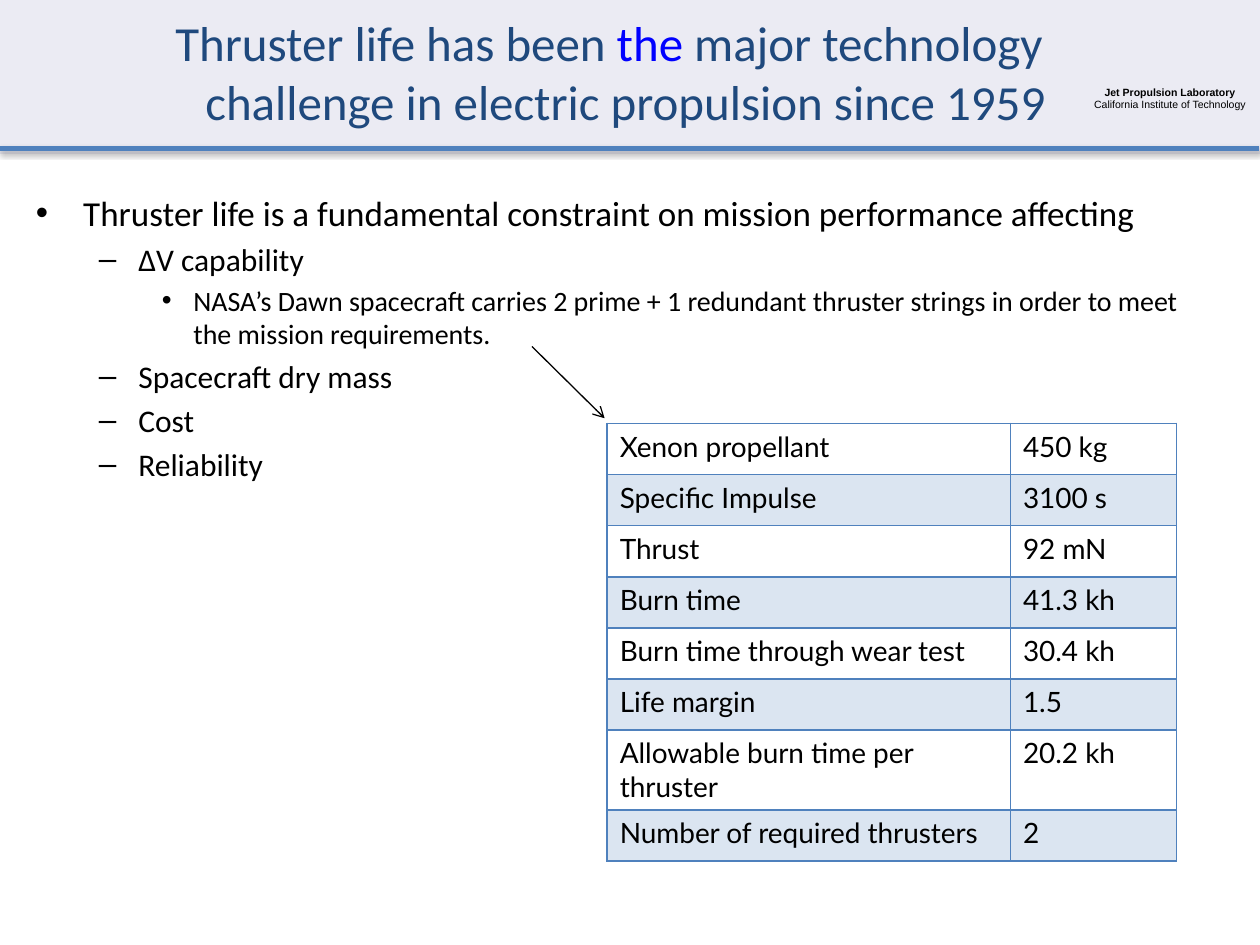
from dataclasses import dataclass

from lxml.etree import SubElement
from pptx import Presentation
from pptx.dml.color import RGBColor
from pptx.enum.shapes import MSO_CONNECTOR, MSO_SHAPE
from pptx.enum.text import MSO_ANCHOR, PP_ALIGN
from pptx.oxml.ns import qn
from pptx.util import Pt


@dataclass(frozen=True)
class Theme:
    black: str = "000000"
    navy: str = "1F497D"
    accent: str = "4F81BD"
    emphasis: str = "0000FF"
    band: str = "EBEBF3"
    body_font: str = "Calibri"
    label_font: str = "Arial"
    table_font: str = "Lato"
    title_size: float = 28
    level_sizes: tuple = (20, 18, 16)
    table_size: float = 16
    label_size: float = 6


LEVELS = ((27, -27, "•"), (58.5, -22.5, "–"), (90, -18, "•"))

BULLETS = (
    (0, "Thruster life is a fundamental constraint on mission performance affecting"),
    (1, "ΔV capability"),
    (2, "NASA’s Dawn spacecraft carries 2 prime + 1 redundant thruster strings "
        "in order to meet the mission requirements."),
    (1, "Spacecraft dry mass"),
    (1, "Cost"),
    (1, "Reliability"),
)

THRUSTER_DATA = (
    ("Xenon propellant", "450 kg"),
    ("Specific Impulse", "3100 s"),
    ("Thrust", "92 mN"),
    ("Burn time", "41.3 kh"),
    ("Burn time through wear test", "30.4 kh"),
    ("Life margin", "1.5"),
    ("Allowable burn time per thruster", "20.2 kh"),
    ("Number of required thrusters", "2"),
)


def add_span(para, text, *, font, size, color, bold=False):
    span = para.add_run()
    span.text = text
    span.font.name = font
    span.font.size = Pt(size)
    span.font.bold = bold
    span.font.color.rgb = RGBColor.from_string(color)


def add_color(parent, color, alpha):
    node = SubElement(parent, qn("a:srgbClr"), val=color)
    SubElement(node, qn("a:alpha"), val=str(alpha * 1000))


def indent(para, margin, first):
    properties = para._p.get_or_add_pPr()
    properties.set("marL", str(Pt(margin)))
    properties.set("indent", str(Pt(first)))
    return properties


class SlideBuilder:
    def __init__(self, page, theme):
        self.page = page
        self.theme = theme

    def band(self, left, top, width, height):
        band = self.page.shapes.add_shape(
            MSO_SHAPE.RECTANGLE, Pt(left), Pt(top), Pt(width), Pt(height))
        band.shadow.inherit = False
        band.fill.solid()
        band.fill.fore_color.rgb = RGBColor.from_string(self.theme.band)
        band.line.fill.background()

    def line(self, start, end, color, width, shadow=False, arrow=False):
        line = self.page.shapes.add_connector(
            MSO_CONNECTOR.STRAIGHT, *map(Pt, start + end))
        line.line.color.rgb = RGBColor.from_string(color)
        line.line.width = Pt(width)
        if arrow:
            SubElement(line.line._get_or_add_ln(), qn("a:tailEnd"), type="arrow")
        effects = SubElement(line._element.spPr, qn("a:effectLst"))
        if shadow:
            outer = SubElement(
                effects, qn("a:outerShdw"), blurRad=str(Pt(3.1)),
                dist=str(Pt(1.8)), dir="5400000", rotWithShape="0")
            add_color(outer, self.theme.black, 35)

    def text_box(self, left, top, width, height, anchor=MSO_ANCHOR.TOP):
        box = self.page.shapes.add_textbox(Pt(left), Pt(top), Pt(width), Pt(height))
        frame = box.text_frame
        frame.word_wrap = True
        frame.vertical_anchor = anchor
        return frame

    def label(self, first, second, *place):
        frame = self.text_box(*place)
        frame.margin_left = frame.margin_right = 0
        frame.margin_top = frame.margin_bottom = 0
        para = frame.paragraphs[0]
        para.alignment = PP_ALIGN.CENTER
        style = dict(font=self.theme.label_font, size=self.theme.label_size,
                     color=self.theme.black)
        add_span(para, first, bold=True, **style)
        para.add_line_break()
        add_span(para, second, **style)

    def title(self, spans, *place):
        para = self.text_box(*place, anchor=MSO_ANCHOR.MIDDLE).paragraphs[0]
        indent(para, 18.75, -18.75)
        para.alignment = PP_ALIGN.CENTER
        for text, color in spans:
            add_span(para, text, font=self.theme.body_font,
                     size=self.theme.title_size, color=color)

    def bullets(self, items, *place):
        frame = self.text_box(*place)
        for index, (level, text) in enumerate(items):
            para = frame.add_paragraph() if index else frame.paragraphs[0]
            margin, first, mark = LEVELS[level]
            size = self.theme.level_sizes[level]
            properties = indent(para, margin, first)
            SubElement(properties, qn("a:buFont"), typeface="Arial")
            SubElement(properties, qn("a:buChar"), char=mark)
            para.level = level
            if index:
                para.space_before = Pt(size * 0.2)
            add_span(para, text, font=self.theme.body_font, size=size,
                     color=self.theme.black)

    def cell(self, cell, text, shaded):
        properties = cell._tc.get_or_add_tcPr()
        for side in ("lnL", "lnR", "lnT", "lnB"):
            border = SubElement(properties, qn(f"a:{side}"), w=str(Pt(1)))
            fill = SubElement(border, qn("a:solidFill"))
            add_color(fill, self.theme.accent, 100)
        if shaded:
            add_color(SubElement(properties, qn("a:solidFill")), self.theme.accent, 20)
        else:
            cell.fill.background()
        add_span(cell.text_frame.paragraphs[0], text, font=self.theme.table_font,
                 size=self.theme.table_size, color=self.theme.black)

    def table(self, rows, left, top, widths, row_height):
        table = self.page.shapes.add_table(
            len(rows), len(widths), Pt(left), Pt(top),
            Pt(sum(widths)), Pt(row_height * len(rows))).table
        table.first_row = False
        table.horz_banding = False
        for column, width in zip(table.columns, widths):
            column.width = Pt(width)
        for row_index, values in enumerate(rows):
            for column_index, text in enumerate(values):
                self.cell(table.cell(row_index, column_index), text, row_index % 2 == 1)


def main():
    theme = Theme()
    deck = Presentation()
    deck.slide_width, deck.slide_height = Pt(720), Pt(540)
    slide = SlideBuilder(deck.slides.add_slide(deck.slide_layouts[6]), theme)

    slide.band(0, 0, 720, 88)
    slide.line((0, 85), (719.5, 85), theme.accent, 3, shadow=True)
    slide.label("Jet Propulsion Laboratory", "California Institute of Technology",
                623.5, 49, 90, 14.4)
    slide.title(
        (("Thruster life has been ", theme.navy),
         ("the", theme.emphasis),
         (" major technology challenge in electric propulsion since 1959", theme.navy)),
        78, 8, 540, 66)
    slide.bullets(BULLETS, 13.5, 106, 684, 378)
    slide.table(THRUSTER_DATA, 347, 242, (230.4, 95), 29.2)
    slide.line((304, 198), (345.5, 239), theme.black, 0.75, arrow=True)

    deck.save("out.pptx")


if __name__ == "__main__":
    main()
